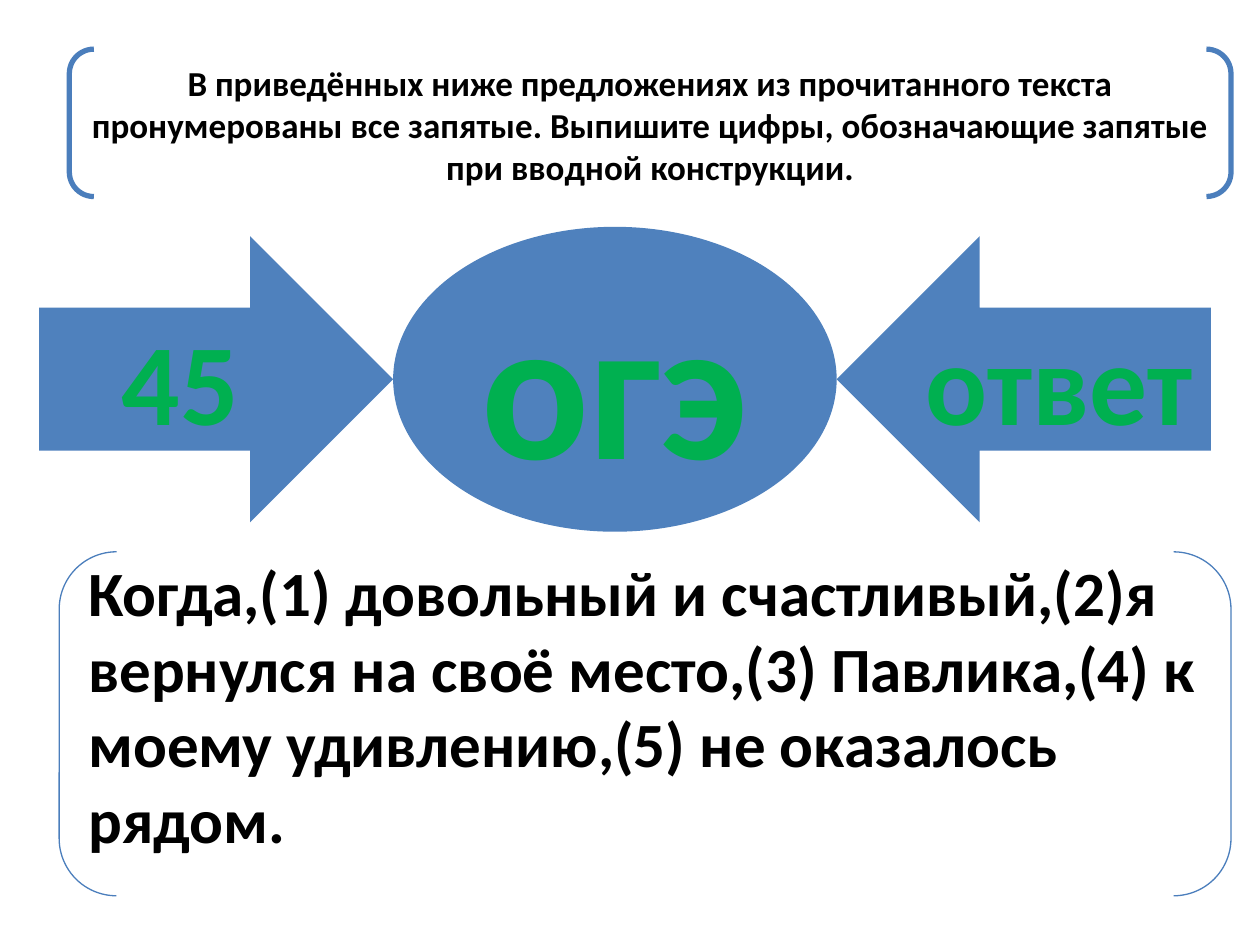
from dataclasses import dataclass

from pptx import Presentation
from pptx.dml.color import RGBColor
from pptx.enum.shapes import MSO_SHAPE
from pptx.enum.text import MSO_ANCHOR, MSO_AUTO_SIZE, PP_ALIGN
from pptx.util import Inches, Pt


@dataclass(frozen=True)
class Theme:
    """Colours, font and type sizes of the slide."""
    font: str = "Calibri"
    fill: RGBColor = RGBColor(0x4F, 0x81, 0xBD)
    line: RGBColor = RGBColor(0x4B, 0x7E, 0xBC)
    text: RGBColor = RGBColor(0, 0, 0)
    accent: RGBColor = RGBColor(0, 0xB0, 0x50)
    title_size: int = 20
    body_size: int = 36
    label_size: int = 66
    centre_size: int = 115


THEME = Theme()
TASK = ("В приведённых ниже предложениях из прочитанного текста пронумерованы "
        "все запятые. Выпишите цифры, обозначающие запятые при вводной конструкции.")
SENTENCE = ("Когда,(1) довольный и счастливый,(2)я вернулся на своё место,(3) "
            "Павлика,(4) к моему удивлению,(5) не оказалось рядом.")


def set_attrs(target, values):
    """Set every attribute named in values."""
    for name, value in values.items():
        setattr(target, name, value)


def write(sp, text, size, color, align=PP_ALIGN.CENTER, top=0.05, bottom=0.05):
    """Put one formatted bold paragraph in a shape."""
    tf = sp.text_frame
    set_attrs(tf, {"word_wrap": True, "auto_size": MSO_AUTO_SIZE.NONE,
                   "vertical_anchor": MSO_ANCHOR.MIDDLE,
                   "margin_left": Inches(0.1), "margin_right": Inches(0.1),
                   "margin_top": Inches(top), "margin_bottom": Inches(bottom)})
    p = tf.paragraphs[0]
    p.alignment = align
    r = p.add_run()
    r.text = text
    set_attrs(r.font, {"name": THEME.font, "size": Pt(size), "bold": True})
    r.font.color.rgb = color


def add_bracket(s, box, width):
    """Draw an unfilled pair of brackets around a box."""
    sp = s.shapes.add_shape(MSO_SHAPE.DOUBLE_BRACKET, *map(Inches, box))
    sp.shadow.inherit = False
    sp.fill.background()
    sp.line.color.rgb = THEME.line
    sp.line.width = Pt(width)
    return sp


def add_solid(s, kind, box, text, size):
    """Draw a filled shape with an accent label."""
    sp = s.shapes.add_shape(kind, *map(Inches, box))
    sp.shadow.inherit = False
    sp.fill.solid()
    sp.fill.fore_color.rgb = THEME.fill
    sp.line.fill.background()
    write(sp, text, size, THEME.accent)


def add_task(s, box):
    """Place the title inside thick brackets."""
    add_bracket(s, box, 3)
    title = s.shapes.title
    set_attrs(title, dict(zip(("left", "top", "width", "height"), map(Inches, box))))
    write(title, TASK, THEME.title_size, THEME.text, top=0.08)


def add_diagram(s, box):
    """Place two arrows pointing at a central ellipse."""
    left, top, width, height = box
    left_w, centre_w, arrow_h = 2.81, 3.52, 2.27
    arrow_top = top + (height - arrow_h) / 2
    centre_x = left + left_w
    right_x = centre_x + centre_w
    right_w = left + width - right_x
    add_solid(s, MSO_SHAPE.RIGHT_ARROW, (left, arrow_top, left_w, arrow_h),
              "45", THEME.label_size)
    add_solid(s, MSO_SHAPE.LEFT_ARROW, (right_x, arrow_top, right_w, arrow_h),
              "ответ", THEME.label_size)
    add_solid(s, MSO_SHAPE.OVAL, (centre_x, top, centre_w, height),
              "огэ", THEME.centre_size)


def add_sentence(s, box):
    """Place the numbered sentence inside thin brackets."""
    sp = add_bracket(s, box, 0.75)
    write(sp, SENTENCE, THEME.body_size, THEME.text, PP_ALIGN.LEFT, bottom=0.35)


def main():
    """Build and save the slide."""
    prs = Presentation()
    prs.slide_width, prs.slide_height = Inches(10), Inches(7.5)
    s = prs.slides.add_slide(prs.slide_layouts.get_by_name("Title Only"))
    add_task(s, (0.55, 0.39, 9.22, 1.17))
    add_sentence(s, (0.47, 4.38, 9.3, 2.73))
    add_diagram(s, (0.31, 1.8, 9.3, 2.42))
    prs.save("out.pptx")


if __name__ == "__main__":
    main()
